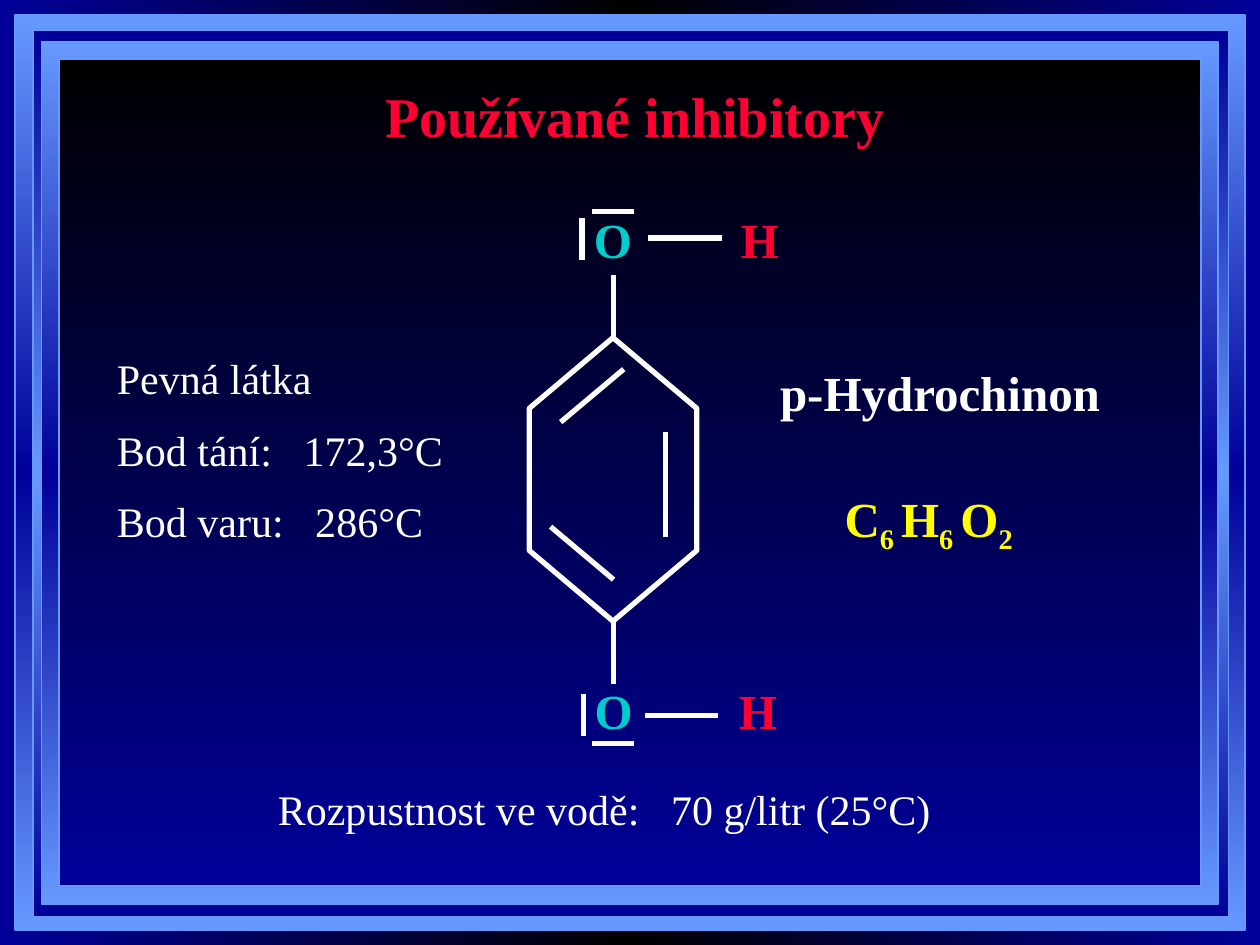
import pptx
import pptx.dml.color
import pptx.enum.shapes
import pptx.enum.text
import pptx.oxml
import pptx.oxml.ns
import pptx.util
from lxml import etree

Inches = pptx.util.Inches
Pt = pptx.util.Pt
qn = pptx.oxml.ns.qn
ALIGN = pptx.enum.text.PP_ALIGN
SHAPE = pptx.enum.shapes.MSO_SHAPE

WHITE, RED, CYAN, YELLOW = "FFFFFF", "FF0033", "00CCCC", "FFFF00"
BLACK, NAVY, SKY = "000000", "000099", "6699FF"
WIDE_SPACE = " "


def color(value):
    """Turn a hex string into a colour."""
    return pptx.dml.color.RGBColor.from_string(value)


class SlideBuilder:
    """Holds the style and the current slide."""

    font = "Times New Roman"
    bond_width = 3
    gap_spacing = 1200

    def __init__(self, slide):
        """Keep the slide to draw on."""
        self.slide = slide
        self.shapes = slide.shapes

    def gradient(self, fill, owner, colors, angle):
        """Fill with evenly spaced colour stops."""
        fill.gradient()
        fill.gradient_angle = angle
        stops = next(owner.iter(qn("a:gsLst")))
        for stop in list(stops):
            stops.remove(stop)
        for index, value in enumerate(colors):
            position = 100000 * index // (len(colors) - 1)
            stop = etree.SubElement(stops, qn("a:gs"), pos=str(position))
            etree.SubElement(stop, qn("a:srgbClr"), val=value)

    def background(self, colors):
        """Paint the slide background from left to right."""
        self.gradient(self.slide.background.fill, self.slide.element, colors, 0)

    def frame(self, left, top, width, height, colors):
        """Draw one rectangle shaded from top to bottom."""
        shape = self.shapes.add_shape(SHAPE.RECTANGLE, Inches(left), Inches(top),
                                      Inches(width), Inches(height))
        shape.shadow.inherit = False
        self.gradient(shape.fill, shape.element, colors, 270)
        shape.line.color.rgb = color(SKY)
        shape.line.width = Pt(1)

    def format_span(self, span, size, value, bold):
        """Apply the font to a run."""
        span.font.name = self.font
        span.font.size = Pt(size)
        span.font.bold = bold
        span.font.color.rgb = color(value)

    def title(self, text, left, top, width, height):
        """Place the title in front of the frames."""
        title = self.shapes.title
        title.left, title.top = Inches(left), Inches(top)
        title.width, title.height = Inches(width), Inches(height)
        title.text_frame.text = text
        title.text_frame.vertical_anchor = pptx.enum.text.MSO_ANCHOR.MIDDLE
        para = title.text_frame.paragraphs[0]
        para.alignment = ALIGN.CENTER
        self.format_span(para.runs[0], 32, RED, True)
        title.element.getparent().append(title.element)

    def text(self, lines, left, top, width, height, value=WHITE, size=28,
             bold=True, align=ALIGN.CENTER):
        """Add a text box; each line is a list of run texts."""
        box = self.shapes.add_textbox(Inches(left), Inches(top),
                                      Inches(width), Inches(height))
        frame = box.text_frame
        frame.word_wrap = True
        frame.auto_size = pptx.enum.text.MSO_AUTO_SIZE.SHAPE_TO_FIT_TEXT
        for index, parts in enumerate(lines):
            para = frame.add_paragraph() if index else frame.paragraphs[0]
            para.alignment = align
            before = etree.SubElement(para._p.get_or_add_pPr(), qn("a:spcBef"))
            etree.SubElement(before, qn("a:spcPct"), val="50000")
            for part in parts:
                span = para.add_run()
                span.text = part
                self.format_span(span, size, value, bold)
                if part == WIDE_SPACE:
                    span.font._element.set("spc", str(self.gap_spacing))
                elif part.strip().isdigit():
                    span.font._element.set("baseline", "-25000")
        return box

    def bond(self, x1, y1, x2, y2):
        """Draw one straight bond or electron pair."""
        line = self.shapes.add_connector(pptx.enum.shapes.MSO_CONNECTOR.STRAIGHT,
                                         Inches(x1), Inches(y1), Inches(x2), Inches(y2))
        line.line.color.rgb = color(WHITE)
        line.line.width = Pt(self.bond_width)
        etree.SubElement(line.element.spPr, qn("a:effectLst"))

    def ring(self, left, top, width, height):
        """Draw the upright hexagonal ring."""
        shape = self.shapes.add_shape(SHAPE.HEXAGON, Inches(left), Inches(top),
                                      Inches(width), Inches(height))
        shape.rotation = 90
        shape.adjustments[0] = 0.422
        shape.shadow.inherit = False
        shape.fill.background()
        shape.line.color.rgb = color(WHITE)
        shape.line.width = Pt(self.bond_width)


def main():
    """Build the hydroquinone slide."""
    deck = pptx.Presentation()
    deck.slide_width, deck.slide_height = Inches(10), Inches(7.5)
    builder = SlideBuilder(deck.slides.add_slide(deck.slide_layouts[5]))

    builder.background([NAVY, BLACK, NAVY])
    builder.frame(0.12, 0.12, 9.76, 7.26, [SKY, NAVY, SKY])
    builder.frame(0.26, 0.24, 9.49, 7.04, [NAVY, SKY, NAVY])
    builder.frame(0.33, 0.33, 9.34, 6.85, [SKY, NAVY, SKY])
    builder.frame(0.47, 0.47, 9.06, 6.56, [BLACK, NAVY])
    builder.title("Používané inhibitory", 0.58, 0.5, 8.92, 0.83)

    builder.text([["p-Hydrochinon"]], 5.75, 2.83, 3.42, 0.57)
    builder.text([["C", "6 ", "H", "6 ", "O", "2"]], 6.33, 3.83, 2.08, 0.57, YELLOW)
    properties = [["Pevná látka"],
                  ["Bod tání:", WIDE_SPACE, "172,3°C"],
                  ["Bod varu:", WIDE_SPACE, "286°C"]]
    builder.text(properties, 0.83, 2.75, 2.83, 1.7, size=24, bold=False, align=ALIGN.LEFT)
    solubility = [["Rozpustnost ve vodě:", WIDE_SPACE, "70 g/litr (25°C)"]]
    builder.text(solubility, 1.92, 6.17, 5.75, 0.5, size=24, bold=False)

    atoms = [("O", 4.62, 5.35, 0.5, CYAN), ("O", 4.53, 1.61, 0.67, CYAN),
             ("H", 5.7, 5.35, 0.63, RED), ("H", 5.74, 1.61, 0.58, RED)]
    for symbol, left, top, width, value in atoms:
        builder.text([[symbol]], left, top, width, 0.57, value)

    builder.ring(3.74, 3.14, 2.25, 1.33)
    double_bonds = [(5.28, 4.26, 5.28, 3.43), (4.87, 4.6, 4.37, 4.18),
                    (4.45, 3.35, 4.95, 2.93)]
    ring_bonds = [(4.87, 2.68, 4.87, 2.18), (4.87, 5.43, 4.87, 4.93)]
    hydrogen_bonds = [(5.12, 5.68, 5.7, 5.68), (5.14, 1.89, 5.73, 1.89)]
    electron_pairs = [(4.7, 1.68, 5.03, 1.68), (4.7, 5.9, 5.03, 5.9),
                      (4.62, 2.06, 4.62, 1.73), (4.63, 5.84, 4.63, 5.51)]
    for ends in double_bonds + ring_bonds + hydrogen_bonds + electron_pairs:
        builder.bond(*ends)

    deck.save("out.pptx")


if __name__ == "__main__":
    main()
